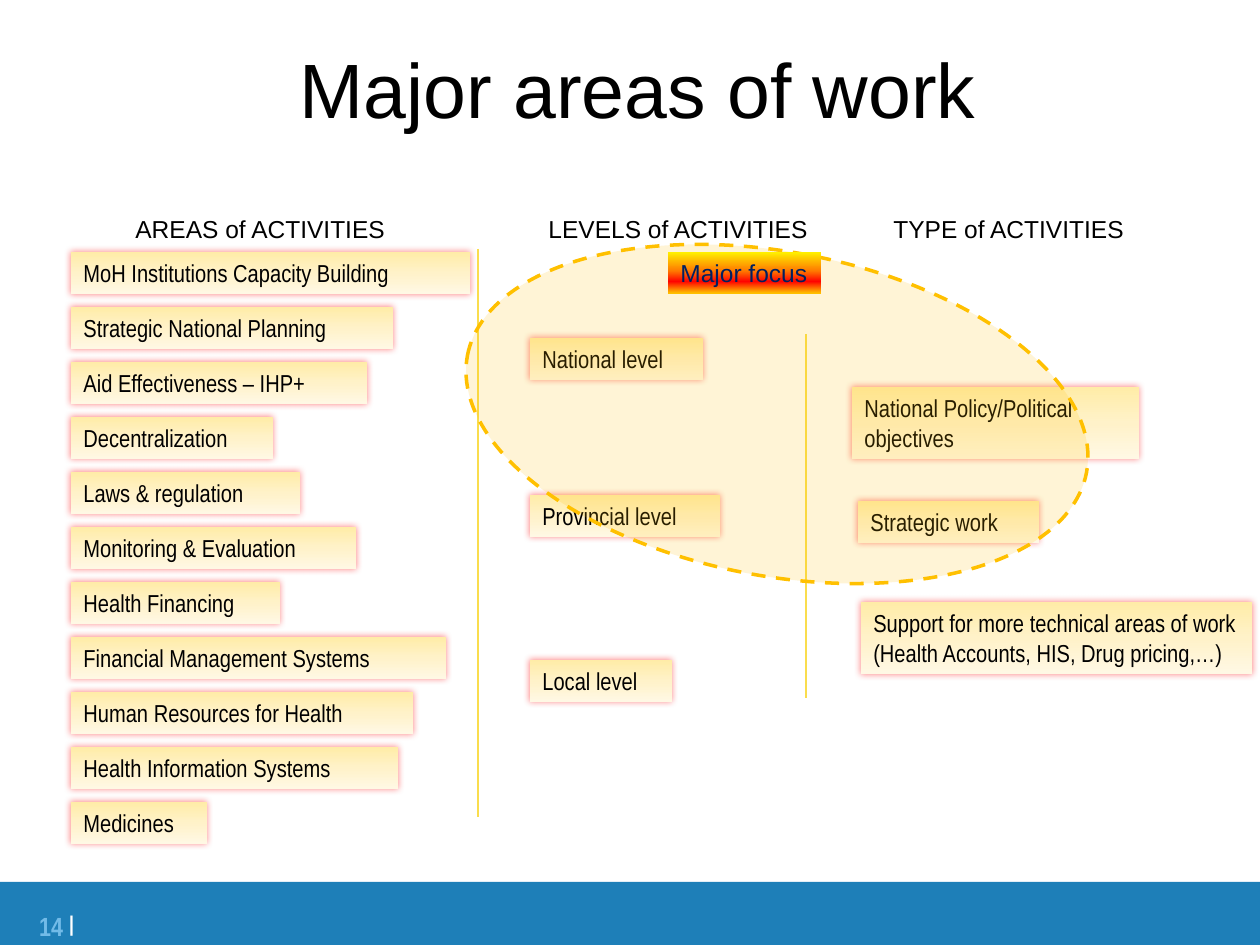
from lxml.etree import SubElement
from pptx import Presentation
from pptx.dml.color import RGBColor
from pptx.enum.dml import MSO_LINE
from pptx.enum.shapes import MSO_CONNECTOR, MSO_SHAPE
from pptx.enum.text import MSO_ANCHOR, PP_ALIGN
from pptx.oxml.ns import qn
from pptx.util import Emu, Pt

PX = 914400 // 126
CREAM = [(0, "FFECA7"), (50, "FFF2C9"), (100, "FFF8E4")]
FIRE = [(0, "FFF200"), (45, "FF7A00"), (70, "FF0300"), (98, "FFC000"), (100, "FFC000")]


def color(value):
    return RGBColor.from_string(value)


def add_color(parent, value, alpha=None):
    node = SubElement(parent, qn("a:srgbClr"), val=value)
    if alpha is not None:
        SubElement(node, qn("a:alpha"), val=str(alpha * 1000))


class Slide:
    narrow = {"name": "Arial Narrow", "size": Pt(14), "bold": False}
    regular = {"name": "Arial", "size": Pt(14), "bold": False}

    def __init__(self, deck):
        self.page = deck.slides.add_slide(deck.slide_layouts[5])

    def place(self, *lengths):
        return [Emu(length * PX) for length in lengths]

    def span(self, para, text, style, ink="000000"):
        span = para.add_run()
        span.text = text
        for name, value in style.items():
            setattr(span.font, name, value)
        span.font.color.rgb = color(ink)
        return span

    def fill_text(self, box, lines, style, ink="000000", wrap=True):
        frame = box.text_frame
        frame.word_wrap = wrap
        frame.vertical_anchor = MSO_ANCHOR.TOP
        for index, line in enumerate(lines):
            para = frame.add_paragraph() if index else frame.paragraphs[0]
            para.alignment = PP_ALIGN.LEFT
            self.span(para, line, style, ink)

    def title(self, text, *area):
        box = self.page.shapes.title
        box.left, box.top, box.width, box.height = self.place(*area)
        frame = box.text_frame
        frame.vertical_anchor = MSO_ANCHOR.MIDDLE
        para = frame.paragraphs[0]
        para.alignment = PP_ALIGN.CENTER
        self.span(para, text, {**self.regular, "size": Pt(44)})

    def shape(self, kind, *area, fill=None):
        shape = self.page.shapes.add_shape(kind, *self.place(*area))
        shape.shadow.inherit = False
        shape.line.fill.background()
        if fill:
            shape.fill.solid()
            shape.fill.fore_color.rgb = color(fill)
        return shape

    def gradient_box(self, lines, *area, stops=CREAM, style=narrow, ink="000000", glow=True):
        box = self.shape(MSO_SHAPE.RECTANGLE, *area)
        box.fill.gradient()
        box.fill.gradient_angle = 270  # counted anticlockwise: top to bottom
        stop_list = box._element.spPr.find(qn("a:gradFill")).find(qn("a:gsLst"))
        for stop in list(stop_list):
            stop_list.remove(stop)
        for position, value in stops:
            add_color(SubElement(stop_list, qn("a:gs"), pos=str(position * 1000)), value)
        if glow:
            effects = box._element.spPr.find(qn("a:effectLst"))
            shadow = SubElement(effects, qn("a:outerShdw"), blurRad=str(Pt(4)),
                                dist="0", dir="5400000", rotWithShape="0")
            add_color(shadow, "FF0000", 47)
        self.fill_text(box, lines, style, ink, wrap=style is self.narrow)

    def heading(self, text, *area):
        box = self.page.shapes.add_textbox(*self.place(*area))
        self.fill_text(box, [text], self.regular, wrap=False)

    def divider(self, x, top, bottom):
        line = self.page.shapes.add_connector(
            MSO_CONNECTOR.STRAIGHT, *self.place(x, top, x, bottom))
        line.line.color.rgb = color("FADD4D")
        line.line.width = Pt(0.75)
        SubElement(line._element.spPr, qn("a:effectLst"))

    def focus_ellipse(self, *area):
        ellipse = self.shape(MSO_SHAPE.OVAL, *area, fill="FFC000")
        fill_color = ellipse._element.spPr.find(qn("a:solidFill"))[0]
        SubElement(fill_color, qn("a:alpha"), val="16000")
        ellipse.rotation = 10.7
        ellipse.line.color.rgb = color("FFC000")
        ellipse.line.width = Pt(2)
        ellipse.line.dash_style = MSO_LINE.DASH

    def page_number(self, number, *area):
        box = self.page.shapes.add_textbox(*self.place(*area))
        frame = box.text_frame
        for side in ("left", "top", "right", "bottom"):
            setattr(frame, f"margin_{side}", 0)
        frame.word_wrap = True
        para = frame.paragraphs[0]
        para.alignment = PP_ALIGN.RIGHT
        bold = {**self.narrow, "bold": True}
        self.span(para, f"{number} ", {**bold, "size": Pt(15)}, "72BBE8")
        bar = self.span(para, "|", {**bold, "size": Pt(21)}, "FFFFFF")
        bar.font._element.set("baseline", "14000")


def main():
    deck = Presentation()
    deck.slide_width, deck.slide_height = Emu(9144000), Emu(6858000)
    slide = Slide(deck)

    # Footer band and title
    slide.shape(MSO_SHAPE.RECTANGLE, 0, 882, 1260, 63, fill="1E7FB8")
    slide.page_number(14, 25, 900, 49, 45)
    slide.title("Major areas of work", 71, 30, 1134, 116)

    # Areas of activities, evenly stacked
    areas = [
        ("MoH Institutions Capacity Building", 399),
        ("Strategic National Planning", 322),
        ("Aid Effectiveness – IHP+", 296),
        ("Decentralization", 202),
        ("Laws & regulation", 229),
        ("Monitoring & Evaluation", 285),
        ("Health Financing", 209),
        ("Financial Management Systems", 375),
        ("Human Resources for Health", 342),
        ("Health Information Systems", 327),
        ("Medicines", 136),
    ]
    for row, (text, width) in enumerate(areas):
        slide.gradient_box([text], 71, 252 + 55 * row, width, 42)

    # Column headings
    for text, x, width in [("AREAS of ACTIVITIES", 123, 277),
                           ("LEVELS of ACTIVITIES", 536, 287),
                           ("TYPE of ACTIVITIES", 881, 258)]:
        slide.heading(text, x, 208, width, 42)

    # Levels of activities
    slide.divider(478, 249, 817)
    for text, y, width in [("National level", 338, 173),
                           ("Provincial level", 495, 190),
                           ("Local level", 660, 142)]:
        slide.gradient_box([text], 530, y, width, 42)

    # Types of activities
    slide.divider(806, 334, 698)
    slide.gradient_box(["National Policy/Political", "objectives"], 852, 387, 287, 72)
    slide.gradient_box(["Support for more technical areas of work",
                        "(Health Accounts, HIS, Drug pricing,…)"], 861, 602, 391, 72)
    slide.gradient_box(["Strategic work"], 858, 501, 181, 42)

    # Major focus
    slide.focus_ellipse(462, 252, 630, 324)
    slide.gradient_box(["Major focus"], 668, 252, 153, 42, stops=FIRE,
                       style=slide.regular, ink="002060", glow=False)

    deck.save("out.pptx")


if __name__ == "__main__":
    main()
